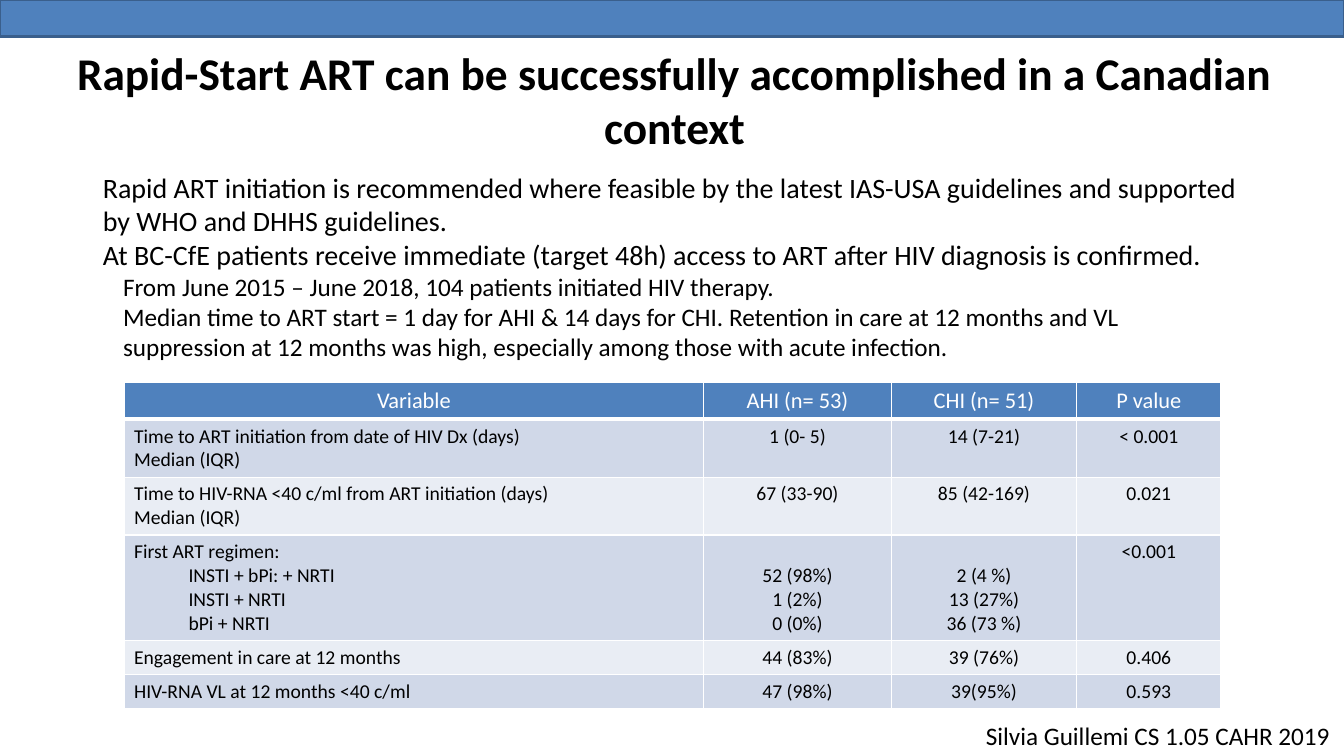
import pptx
import pptx.util
import pptx.dml.color
import pptx.enum.shapes
import pptx.enum.text
import pptx.oxml
import pptx.oxml.ns
from lxml import etree

Inches, Pt = pptx.util.Inches, pptx.util.Pt
ALIGN = pptx.enum.text.PP_ALIGN
ANCHOR = pptx.enum.text.MSO_ANCHOR

# Content
TITLE = "Rapid-Start ART can be successfully accomplished in a Canadian context"
POINTS = [
    (0, "Rapid ART initiation is recommended where feasible by the latest IAS-USA "
        "guidelines and supported by WHO and DHHS guidelines."),
    (0, "At BC-CfE patients receive immediate (target 48h) access to ART after HIV "
        "diagnosis is confirmed."),
    (1, "From June 2015 – June 2018, 104 patients initiated HIV therapy."),
    (1, "Median time to ART start = 1 day for AHI & 14 days for CHI. Retention in care "
        "at 12 months and VL suppression at 12 months was high, especially among those "
        "with acute infection."),
]
SOURCE = "Silvia Guillemi CS 1.05 CAHR 2019"
HEADER = ["Variable", "AHI (n= 53)", "CHI (n= 51)", "P value"]
REGIMEN = "First ART regimen:"
RESULTS = [
    ["Time to ART initiation from date of HIV Dx (days)\nMedian (IQR)",
     "1 (0- 5)", "14 (7-21)", "< 0.001"],
    ["Time to HIV-RNA <40 c/ml from ART initiation (days)\nMedian (IQR)",
     "67 (33-90)", "85 (42-169)", "0.021"],
    [REGIMEN + "\nINSTI + bPi: + NRTI\nINSTI + NRTI\nbPi + NRTI",
     "52 (98%)\n1 (2%)\n0 (0%)", "2 (4 %)\n13 (27%)\n36 (73 %)", "<0.001"],
    ["Engagement in care at 12 months", "44 (83%)", "39 (76%)", "0.406"],
    ["HIV-RNA VL at 12 months <40 c/ml", "47 (98%)", "39(95%)", "0.593"],
]

# Look
BLUE, EDGE, WHITE, BLACK = "4F81BD", "3A5F8C", "FFFFFF", "000000"
BANDS = ["D0D8E8", "E9EDF4"]
FONT = "Calibri"
COLUMNS = [5.75, 1.86, 1.84, 1.43]
CELL_PAD, LINE = 0.05, 0.237  # inches; LINE is one line of 14 pt text
WIDTH, HEIGHT, BAR = 13.33, 7.5, 0.36


def rgb(value):
    return pptx.dml.color.RGBColor.from_string(value)


def apply(target, formats):
    for name, value in formats.items():
        setattr(target, name, value)


def place(shape, left, top, width, height):
    apply(shape, {"left": Inches(left), "top": Inches(top),
                  "width": Inches(width), "height": Inches(height)})


def write(paragraph, text, size, color=BLACK, align=ALIGN.LEFT, indent=0, bold=False):
    apply(paragraph, {"alignment": align, "space_before": Pt(0)})
    props = paragraph._p.get_or_add_pPr()
    props.set("marL", str(Inches(indent)))
    props.set("indent", "0")
    etree.SubElement(props, pptx.oxml.ns.qn("a:buNone"))
    run = paragraph.add_run()
    run.text = text
    apply(run.font, {"name": FONT, "size": Pt(size), "bold": bold})
    run.font.color.rgb = rgb(color)


def paragraphs(frame, count):
    return [frame.paragraphs[0]] + [frame.add_paragraph() for _ in range(count - 1)]


def set_borders(cell, bottom):
    sides = {"lnL": 1, "lnR": 1, "lnT": 1, "lnB": bottom}
    for index, (side, points) in enumerate(sides.items()):
        line = pptx.oxml.parse_xml(
            f'<a:{side} {pptx.oxml.ns.nsdecls("a")} w="{Pt(points)}"><a:solidFill>'
            f'<a:srgbClr val="{WHITE}"/></a:solidFill></a:{side}>')
        cell._tc.get_or_add_tcPr().insert(index, line)


deck = pptx.Presentation()
apply(deck, {"slide_width": Inches(WIDTH), "slide_height": Inches(HEIGHT)})
slide = deck.slides.add_slide(deck.slide_layouts[1])
title, body = slide.placeholders

# Top bar
bar = slide.shapes.add_shape(pptx.enum.shapes.MSO_SHAPE.RECTANGLE,
                             0, 0, Inches(WIDTH), Inches(BAR))
bar.shadow.inherit = False
bar.fill.solid()
bar.fill.fore_color.rgb = rgb(BLUE)
bar.line.color.rgb = rgb(EDGE)
bar.line.width = Pt(2)

# Title and points
place(title, 0.34, BAR, 12.7, 1.25)
place(body, 0.92, 1.64, 11.5, 4.76)
for holder, anchor in ((title, ANCHOR.MIDDLE), (body, ANCHOR.TOP)):
    apply(holder.text_frame, {"vertical_anchor": anchor, "word_wrap": True,
                              "auto_size": pptx.enum.text.MSO_AUTO_SIZE.NONE})
write(title.text_frame.paragraphs[0], TITLE, 32.4, align=ALIGN.CENTER, bold=True)
for paragraph, (level, text) in zip(paragraphs(body.text_frame, len(POINTS)), POINTS):
    paragraph.level = level
    write(paragraph, text, 20 - 2 * level, indent=0.2 * level)

# Source line, bottom right
source = slide.shapes.add_textbox(0, 0, 0, 0)
place(source, WIDTH - 3.65, HEIGHT - 0.4, 3.65, 0.4)
source.text_frame.word_wrap = False
write(source.text_frame.paragraphs[0], SOURCE, 18)

# Results table: row height follows the number of lines
rows = [HEADER] + RESULTS
heights = [0.37] + [2 * CELL_PAD + LINE * (row[0].count("\n") + 1) for row in RESULTS]
table = slide.shapes.add_table(len(rows), len(COLUMNS), Inches(1.23), Inches(3.79),
                               Inches(sum(COLUMNS)), Inches(sum(heights))).table
for column, width in zip(table.columns, COLUMNS):
    column.width = Inches(width)
for r, row in enumerate(rows):
    table.rows[r].height = Inches(heights[r])
    in_regimen = row[0].startswith(REGIMEN)
    for c, text in enumerate(row):
        cell = table.cell(r, c)
        cell.fill.solid()
        cell.fill.fore_color.rgb = rgb(BANDS[(r - 1) % 2] if r else BLUE)
        set_borders(cell, 1 if r else 3)
        lines = text.split("\n")
        # Regimen counts start level with the first regimen
        skipped = LINE if in_regimen and c and len(lines) > 1 else 0
        apply(cell, {"margin_top": Inches(CELL_PAD + skipped),
                     "margin_bottom": Inches(CELL_PAD)})
        for i, paragraph in enumerate(paragraphs(cell.text_frame, len(lines))):
            write(paragraph, lines[i], 14 if r else 16, BLACK if r else WHITE,
                  ALIGN.LEFT if r and c == 0 else ALIGN.CENTER,
                  0.54 if in_regimen and c == 0 and i else 0)

deck.save("out.pptx")
